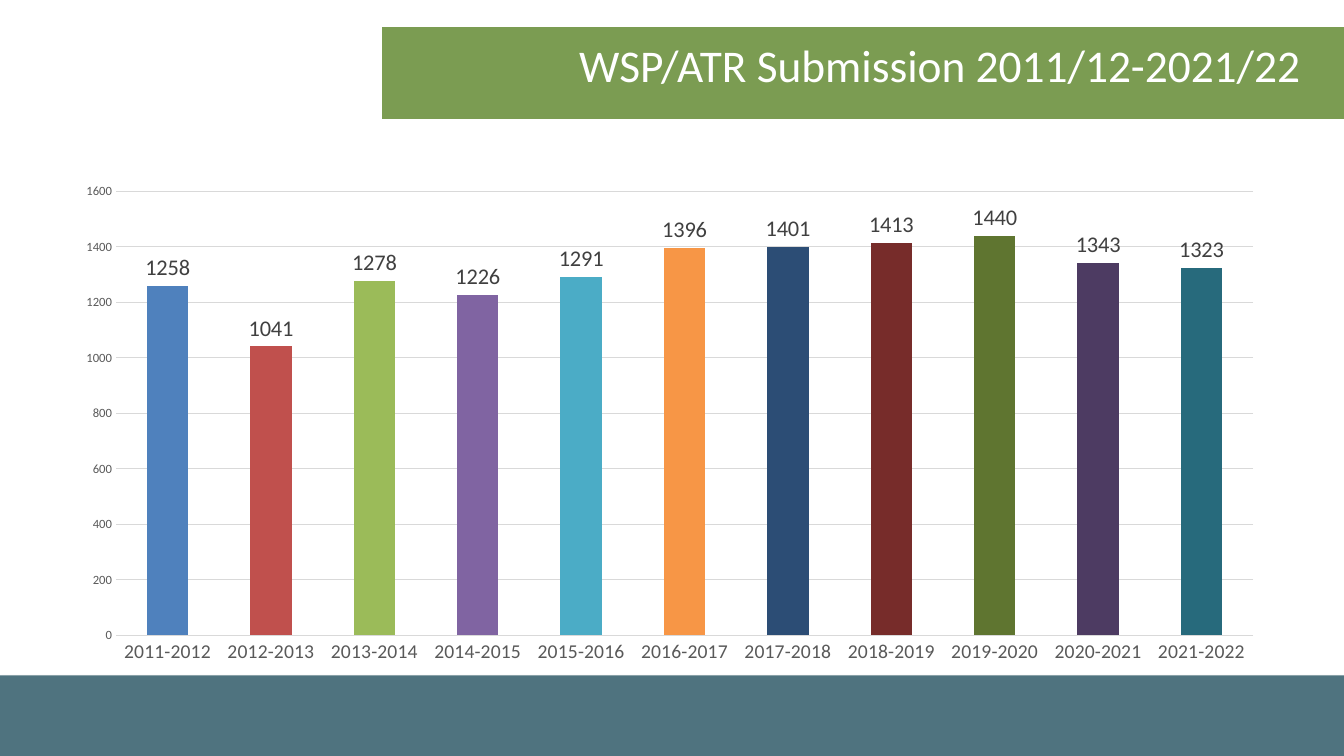
from dataclasses import dataclass
from lxml import etree
from pptx import Presentation
from pptx.chart.data import CategoryChartData
from pptx.dml.color import RGBColor
from pptx.enum.chart import XL_CHART_TYPE, XL_LABEL_POSITION, XL_TICK_MARK
from pptx.enum.shapes import MSO_SHAPE
from pptx.enum.text import MSO_ANCHOR, PP_ALIGN
from pptx.oxml import parse_xml
from pptx.oxml.ns import nsdecls, qn
from pptx.util import Inches, Pt

COLUMN = XL_CHART_TYPE.COLUMN_CLUSTERED
OUTSIDE = XL_LABEL_POSITION.OUTSIDE_END
NO_TICK = XL_TICK_MARK.NONE
RECT = MSO_SHAPE.RECTANGLE
TOP = MSO_ANCHOR.TOP
RIGHT = PP_ALIGN.RIGHT


@dataclass(frozen=True)
class Theme:
    font: str = "Calibri"
    band: str = "7B9C52"
    foot: str = "4F737F"
    white: str = "FFFFFF"
    axis: str = "595959"
    label: str = "404040"
    grid: str = "D9D9D9"
    bars: tuple = ("4F81BD", "C0504D", "9BBB59", "8064A2", "4BACC6", "F79646",
                   "2C4D75", "772C2A", "5F7530", "4D3B62", "276A7C")
    title_size: float = 32.4
    label_size: int = 16
    cat_size: int = 14
    val_size: int = 9


THEME = Theme()
COUNTS = (1258, 1041, 1278, 1226, 1291, 1396, 1401, 1413, 1440, 1343, 1323)
YEARS = [f"{year}-{year + 1}" for year in range(2011, 2011 + len(COUNTS))]


def style(font, size, color):
    font.name = THEME.font
    font.size = Pt(size)
    font.color.rgb = RGBColor.from_string(color)


def add_rect(slide, box, color):
    rect = slide.shapes.add_shape(RECT, *map(Inches, box))
    rect.shadow.inherit = False
    rect.fill.solid()
    rect.fill.fore_color.rgb = RGBColor.from_string(color)
    rect.line.fill.background()
    return rect


def add_foot(slide, box):
    foot = add_rect(slide, box, THEME.foot)
    # Soft shadow under the footer band
    effects = foot.element.spPr.find(qn("a:effectLst"))
    effects.append(parse_xml(
        f'<a:outerShdw {nsdecls("a")} blurRad="{Pt(3.1)}" dist="{Pt(1.8)}" '
        'dir="5400000" rotWithShape="0"><a:srgbClr val="000000">'
        '<a:alpha val="35000"/></a:srgbClr></a:outerShdw>'))


def add_header(slide, box):
    left, top, width, height = box
    add_rect(slide, box, THEME.band)
    # Title, right-aligned on the band
    title = slide.shapes.add_textbox(
        Inches(left), Inches(top + 0.1), Inches(width - 0.35), Inches(height - 0.1))
    frame = title.text_frame
    frame.word_wrap = True
    frame.vertical_anchor = TOP
    frame.margin_top = frame.margin_bottom = 0
    frame.text = "WSP/ATR Submission 2011/12-2021/22"
    para = frame.paragraphs[0]
    para.alignment = RIGHT
    style(para.runs[0].font, THEME.title_size, THEME.white)


def set_layout(chart, **shares):
    # Fixed inner plot area, as shares of the chart box
    area = chart.element.chart.plotArea
    old = area.find(qn("c:layout"))
    if old is not None:
        area.remove(old)
    layout = etree.Element(qn("c:layout"))
    manual = etree.SubElement(layout, qn("c:manualLayout"))
    parts = {"layoutTarget": "inner", "xMode": "edge", "yMode": "edge", **shares}
    for name, value in parts.items():
        etree.SubElement(manual, qn(f"c:{name}")).set("val", str(value))
    area.insert(0, layout)


def add_bars(slide, box):
    data = CategoryChartData()
    data.categories = YEARS
    data.add_series("Series 1", COUNTS)
    chart = slide.shapes.add_chart(COLUMN, *map(Inches, box), data).chart
    chart.has_legend = False
    chart.has_title = False
    chart.font.name = THEME.font
    set_layout(chart, x=0.04, y=0.03, w=0.94, h=0.89)

    # Axes
    cats, vals = chart.category_axis, chart.value_axis
    for axis, size in ((cats, THEME.cat_size), (vals, THEME.val_size)):
        axis.major_tick_mark = axis.minor_tick_mark = NO_TICK
        axis.format.line.fill.background()
        style(axis.tick_labels.font, size, THEME.axis)
    vals.minimum_scale, vals.maximum_scale, vals.major_unit = 0, 1600, 200
    vals.has_major_gridlines = True
    grid = vals.major_gridlines.format.line
    grid.width = Pt(0.75)
    grid.color.rgb = RGBColor.from_string(THEME.grid)

    # Columns and their labels
    plot = chart.plots[0]
    plot.gap_width = 150
    plot.vary_by_categories = False
    series = plot.series[0]
    for index, color in enumerate(THEME.bars):
        fill = series.points[index].format.fill
        fill.solid()
        fill.fore_color.rgb = RGBColor.from_string(color)
    labels = series.data_labels
    labels.show_value = True
    labels.position = OUTSIDE
    style(labels.font, THEME.label_size, THEME.label)


def main():
    deck = Presentation()
    deck.slide_width, deck.slide_height = Inches(13.33), Inches(7.5)
    slide = deck.slides.add_slide(deck.slide_layouts[6])
    add_foot(slide, (0, 6.7, 13.33, 0.8))
    add_header(slide, (3.79, 0.27, 9.56, 0.91))
    add_bars(slide, (0.67, 1.75, 12, 4.95))
    deck.save("out.pptx")


if __name__ == "__main__":
    main()
